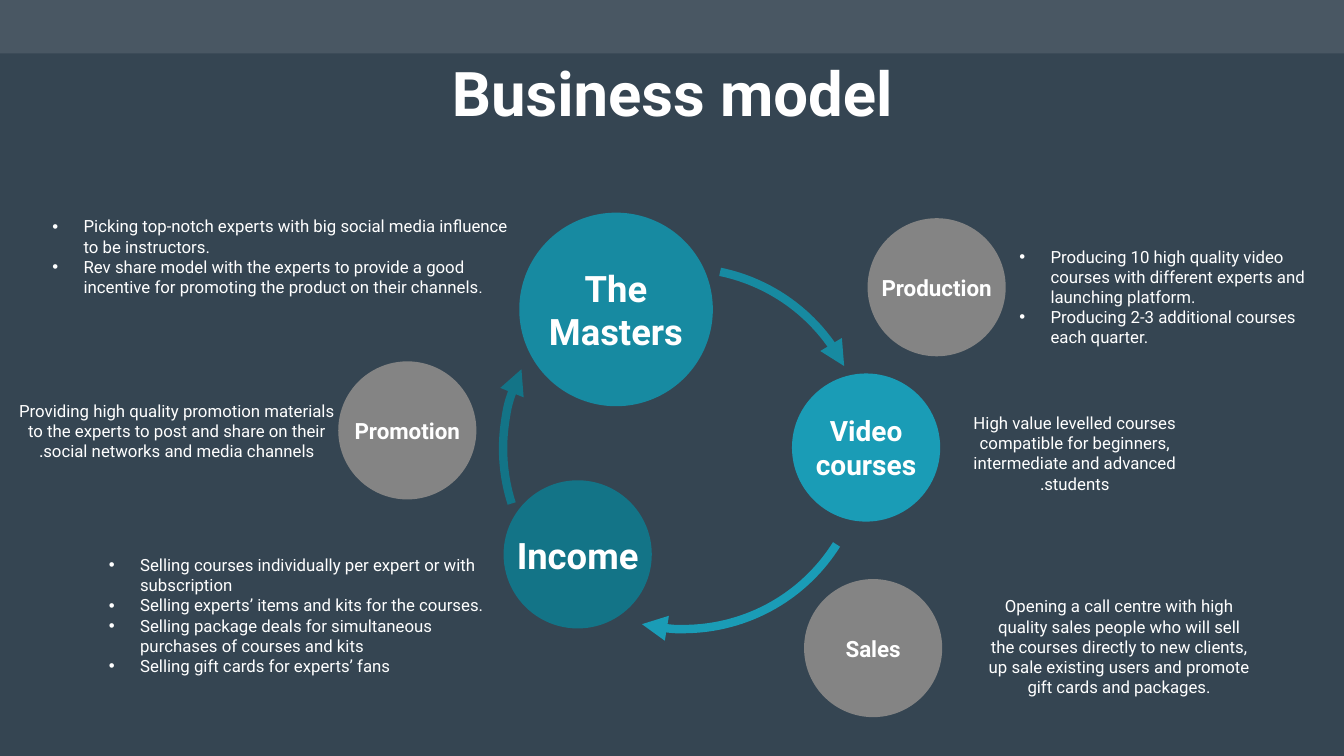
"""Build the business model slide: a cycle of three stages with supporting activities."""
from lxml import etree
from pptx import Presentation
from pptx.dml.color import RGBColor
from pptx.enum import shapes, text
from pptx.oxml.ns import qn
from pptx.util import Inches, Pt

COLORS = {"night": "354552", "white": "FFFFFF", "teal": "178AA1",
          "aqua": "1A9CB6", "deep": "137487", "grey": "848484"}

TITLE = "Business model"

# label, centre x, centre y, diameter, colour, label width, label height, size
CIRCLES = [
    ("The Masters", 6.11, 3.07, 1.92, "teal", 2.18, 1.29, 26),
    ("Video courses", 8.59, 4.44, 1.47, "aqua", 1.71, 1.06, 20),
    ("Income", 5.73, 5.5, 1.47, "deep", 2.18, 1.29, 26),
    ("Production", 9.29, 2.85, 1.37, "grey", 1.55, 0.92, 16),
    ("Sales", 8.66, 6.43, 1.37, "grey", 1.55, 0.92, 16),
    ("Promotion", 4.04, 4.27, 1.37, "grey", 1.55, 0.92, 16),
]

# rotation, start angle, end angle (degrees), colour
CYCLE_BOX = (4.99, 2.66, 3.58, 3.58)
ARROWS = [
    (338, 184.26, 228.08, "deep"),
    (84.3, 197.36, 248.5, "teal"),
    (208.3, 183.77, 255.03, "aqua"),
]

# box, level, indent, style, paragraphs (each a tuple of runs)
NOTES = [
    ((-0.61, 1.81, 5.84, 1.47), 2, 1.31, "bullet", [
        ("Picking top-notch experts with big social media influence to be instructors.",),
        ("Rev share model with the experts to provide a good incentive for "
         "promoting the product on their channels", "."),
    ]),
    ((9.48, 2.21, 3.9, 1.47), 1, 0.81, "bullet", [
        ("Producing 10 high quality video courses with different experts and "
         "launching platform.",),
        ("Producing 2-3 additional courses each quarter.",),
    ]),
    ((0.45, 5.37, 4.64, 1.47), 1, 0.81, "bullet", [
        ("Selling courses individually per expert or with subscription",),
        ("Selling experts’ items and kits for the courses.",),
        ("Selling package deals for simultaneous purchases of courses and kits",),
        ("Selling gift cards for experts’ fans",),
    ]),
    ((9.34, 4, 3.14, 0.99), 1, 0.5, "rtl", [
        ("High value levelled courses compatible for beginners, "
         "intermediate and advanced students.",),
    ]),
    ((0.02, 3.54, 3.97, 1.47), 1, 0.5, "rtl", [
        ("Providing high quality promotion materials to the experts to post and "
         "share on their social networks and media channels.",),
    ]),
    ((8.64, 5.68, 3.92, 1.47), 2, 1, "centre", [
        ("Opening a call centre with high quality sales people who will sell the "
         "courses directly to new clients, up sale existing users and promote "
         "gift cards and packages.",),
    ]),
]
RUN_FONTS = ("Roboto", "Cabin")


def color(name):
    return RGBColor.from_string(COLORS[name])


def add_span(para, words, size, bold=False, font="Roboto"):
    span = para.add_run()
    span.text = words
    span.font.name = font
    span.font.size = Pt(size)
    span.font.bold = bold
    span.font.color.rgb = color("white")


def set_frame(frame, inset):
    frame.word_wrap = True
    frame.auto_size = text.MSO_AUTO_SIZE.NONE
    frame.vertical_anchor = text.MSO_ANCHOR.MIDDLE
    frame.margin_left = frame.margin_right = Inches(inset)
    frame.margin_top = frame.margin_bottom = Inches(inset)
    return frame


def add_box(page, box):
    return set_frame(page.shapes.add_textbox(*map(Inches, box)).text_frame, 0.13)


def add_solid(page, kind, box, fill):
    shape = page.shapes.add_shape(kind, *map(Inches, box))
    shape.shadow.inherit = False
    shape.fill.solid()
    shape.fill.fore_color.rgb = color(fill)
    shape.line.fill.background()
    return shape


def centred(x, y, width, height):
    return x - width / 2, y - height / 2, width, height


def add_header(page):
    bar = add_solid(page, shapes.MSO_SHAPE.RECTANGLE, (0, 0, 13.33, 0.53), "white")
    tint = bar.fill._xPr.find(qn("a:solidFill"))[0]
    etree.SubElement(tint, qn("a:alpha"), val="10000")
    title = page.shapes.title
    title.left, title.top, title.width, title.height = map(Inches, (0.92, 0.53, 11.5, 0.85))
    para = set_frame(title.text_frame, 0.1).paragraphs[0]
    para.alignment = text.PP_ALIGN.CENTER
    para.line_spacing = 0.9
    add_span(para, TITLE, 44, True)


def add_arrow(page, rotation, start, end, tone):
    arc = page.shapes.add_shape(shapes.MSO_SHAPE.ARC, *map(Inches, CYCLE_BOX))
    arc.shadow.inherit = False
    arc.rotation = rotation
    arc.adjustments[0], arc.adjustments[1] = start * 0.6, end * 0.6
    arc.fill.background()
    arc.line.color.rgb = color(tone)
    arc.line.width = Pt(6)
    etree.SubElement(arc.line._get_or_add_ln(), qn("a:tailEnd"), type="triangle")


def add_note(page, box, level, indent, style, paragraphs):
    frame = add_box(page, box)
    for number, runs in enumerate(paragraphs):
        para = frame.add_paragraph() if number else frame.paragraphs[0]
        para.level = level
        para.alignment = text.PP_ALIGN.LEFT if style == "bullet" else text.PP_ALIGN.CENTER
        props = para._p.get_or_add_pPr()
        props.set("marL", str(Inches(indent)))
        props.set("indent", str(Inches(-0.31 if style == "bullet" else 0)))
        if style == "bullet":
            etree.SubElement(props, qn("a:buFont"), typeface="Arial")
            etree.SubElement(props, qn("a:buChar"), char="•")
        elif style == "rtl":
            props.set("rtl", "1")
        for words, font in zip(runs, RUN_FONTS):
            add_span(para, words, 12, font=font)


def main():
    deck = Presentation()
    deck.slide_width, deck.slide_height = Inches(13.33), Inches(7.5)
    page = deck.slides.add_slide(deck.slide_layouts[5])
    page.background.fill.solid()
    page.background.fill.fore_color.rgb = color("night")
    add_header(page)
    for arrow in ARROWS:
        add_arrow(page, *arrow)
    for label, x, y, diameter, fill, width, height, size in CIRCLES:
        add_solid(page, shapes.MSO_SHAPE.OVAL, centred(x, y, diameter, diameter), fill)
        para = add_box(page, centred(x, y, width, height)).paragraphs[0]
        para.alignment = text.PP_ALIGN.CENTER
        add_span(para, label, size, True)
    for note in NOTES:
        add_note(page, *note)
    deck.save("out.pptx")


if __name__ == "__main__":
    main()
